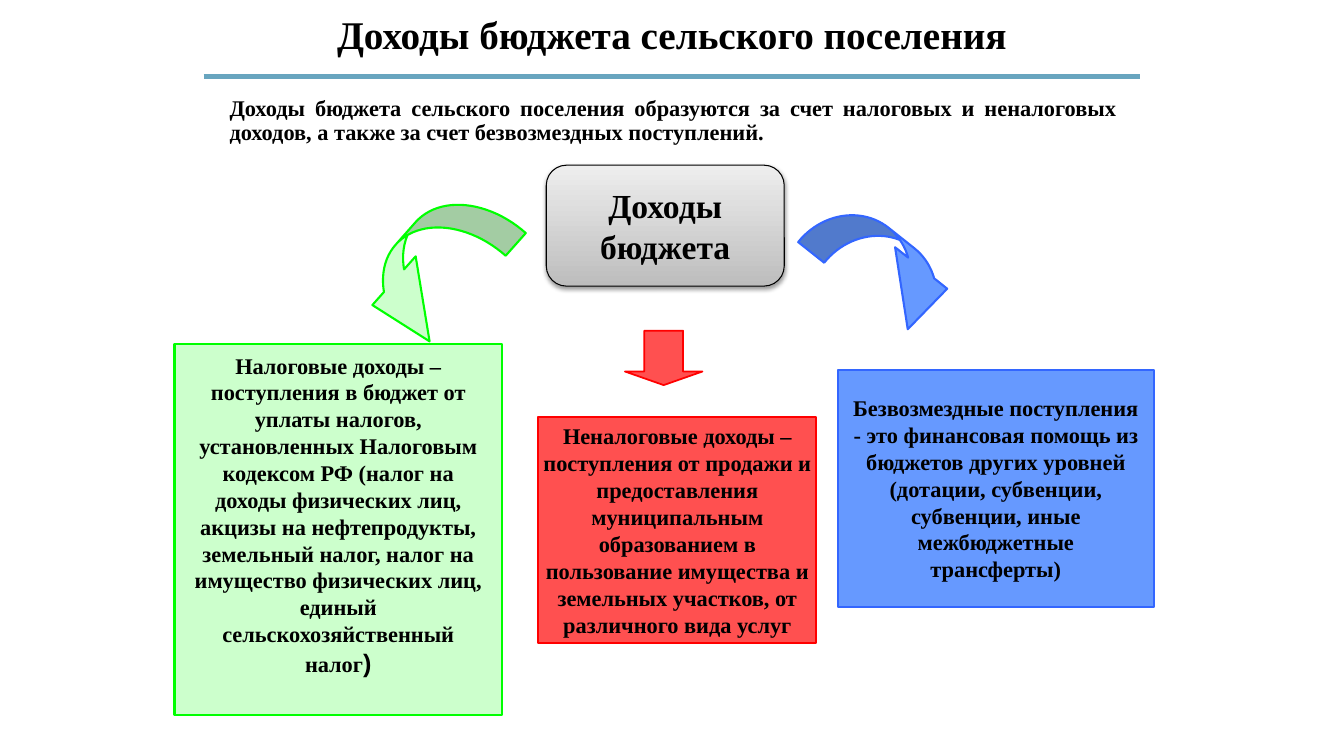
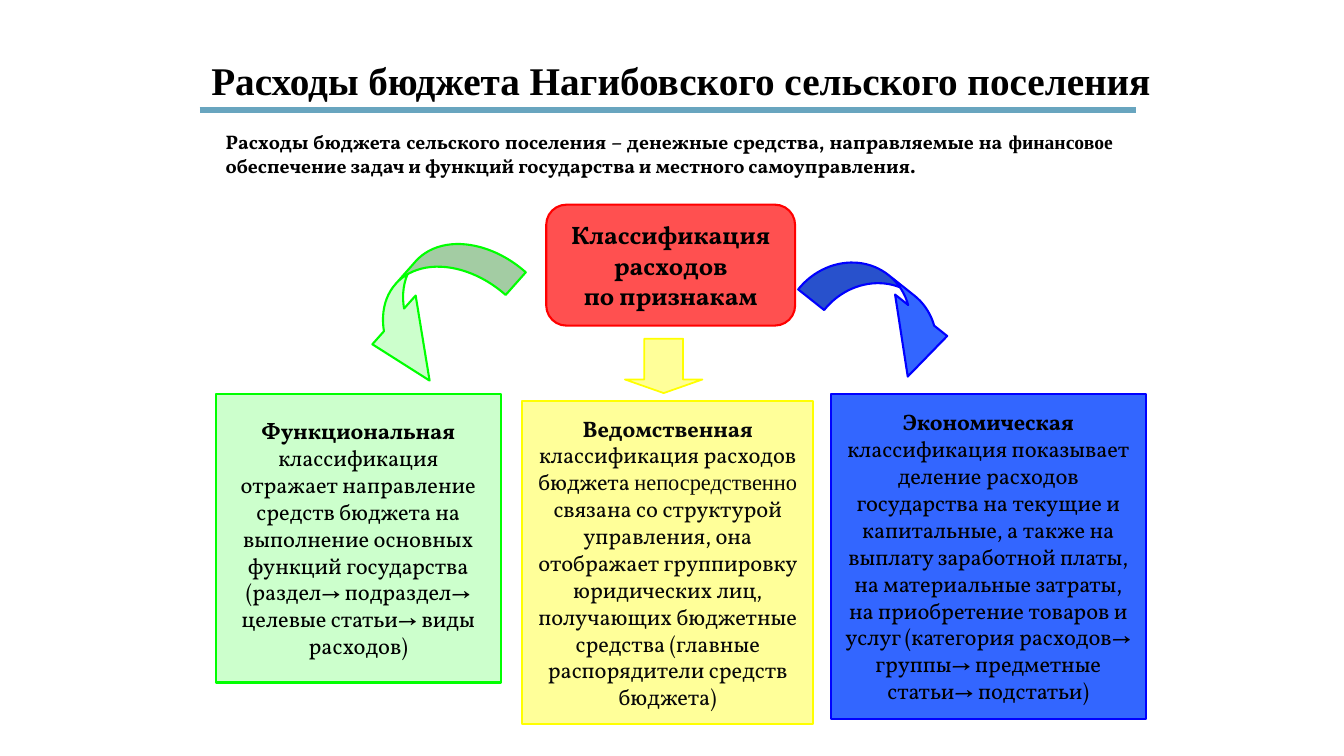
from dataclasses import dataclass
from lxml import etree
from pptx import Presentation
from pptx.dml.color import RGBColor as RGB
from pptx.enum.shapes import MSO_CONNECTOR as Link, MSO_SHAPE as Kind
from pptx.enum.text import MSO_ANCHOR as Anchor, MSO_AUTO_SIZE as Auto, PP_ALIGN as Align
from pptx.oxml import parse_xml
from pptx.oxml.ns import nsdecls, qn
from pptx.util import Pt


@dataclass(frozen=True)
class Theme:
    # Colours: a pair is fill and line
    ink: str = "000000"
    soft: str = "080808"
    rule: str = "68A5BF"
    green: tuple = ("CCFFCC", "00FF00")
    red: tuple = ("FF5050", "FF0000")
    yellow: tuple = ("FFFF99", "FFFF00")
    sky: tuple = ("6699FF", "3366FF")
    blue: tuple = ("3366FF", "0000FF")
    grey: tuple = ("BDBDBD", "EEEEEE")
    # Fonts and sizes
    serif: str = "Times New Roman"
    book: str = "Vollkorn"
    sans: str = "Arial"
    title: int = 28
    hub: int = 24
    mid: int = 18
    body: int = 16
    lead: int = 14


T = Theme()
PLAIN = {"bold": False}
BOLD = {"bold": True}
SERIF = {"name": T.serif}


def pts(*vals):
    return [Pt(v) for v in vals]


def write(shape, paras, font, size, align=Align.CENTER, anchor=Anchor.MIDDLE,
          pad=(7.2, 3.6, 7.2, 3.6), space=1.0, ink=T.ink):
    """Each paragraph is a list of (text, format) runs."""
    frame = shape.text_frame
    left, top, right, low = pts(*pad)
    look = {"word_wrap": True, "auto_size": Auto.NONE, "vertical_anchor": anchor,
            "margin_left": left, "margin_top": top,
            "margin_right": right, "margin_bottom": low}
    for key, val in look.items():
        setattr(frame, key, val)
    for i, runs in enumerate(paras):
        para = frame.paragraphs[0] if i == 0 else frame.add_paragraph()
        para.alignment, para.line_spacing = align, space
        for text, form in runs:
            run = para.add_run()
            run.text = text
            for key, val in {"name": font, "size": Pt(size), **BOLD, **form}.items():
                setattr(run.font, key, val)
            run.font.color.rgb = RGB.from_string(ink)


def draw(slide, kind, box, tone, width=1.5, turn=0, adj=()):
    shape = slide.shapes.add_shape(kind, *pts(*box))
    shape.shadow.inherit = False
    shape.fill.solid()
    shape.fill.fore_color.rgb = RGB.from_string(tone[0])
    shape.line.color.rgb = RGB.from_string(tone[1])
    shape.line.width = Pt(width)
    shape.rotation = turn
    for i, val in enumerate(adj):
        shape.adjustments[i] = val
    return shape


def gloss(shape):
    """Grey gradient, thin dark line and a soft shadow below."""
    shape.fill.gradient()
    shape.fill.gradient_angle = 90
    for stop, tone in zip(shape.fill.gradient_stops, T.grey):
        stop.color.rgb = RGB.from_string(tone)
    shape.line.color.rgb = RGB.from_string(T.ink)
    shape.line.width = Pt(0.75)
    shape.element.spPr.find(qn("a:effectLst")).append(parse_xml(
        f'<a:outerShdw {nsdecls("a")} blurRad="39400" dist="20300" dir="5400000" '
        f'rotWithShape="0"><a:srgbClr val="{T.ink}"><a:alpha val="38000"/>'
        '</a:srgbClr></a:outerShdw>'))


def head(slide, box, title, lead, gap, shift=0, **form):
    """Title above the rule, lead text below; box is the rule's x, y and width."""
    x, y, w = box
    name = slide.shapes.title
    place = pts(x - 52 + shift, y - gap - 40, w + 104, 40)
    for key, val in zip(("left", "top", "width", "height"), place):
        setattr(name, key, val)
    write(name, [[(title, {})]], T.serif, T.title, anchor=Anchor.BOTTOM)
    rule = slide.shapes.add_connector(Link.STRAIGHT, *pts(x, y, x + w, y))
    rule.line.color.rgb = RGB.from_string(T.rule)
    rule.line.width = Pt(3.75)
    etree.SubElement(rule._element.spPr, qn("a:effectLst"))
    text = slide.shapes.add_textbox(*pts(x + 11.5, y + 11, w - 21, 42))
    write(text, [lead], align=Align.JUSTIFY, anchor=Anchor.TOP, **form)


def arrows(slide, x, y, tones, drop, fall):
    """Three arrows: left one at x, y; drop and fall lower the others."""
    left, mid, right = tones
    draw(slide, Kind.CURVED_UP_ARROW, (x, y, 126.7, 64), left,
         turn=131.6, adj=(0.338, 0.727, 0.747))
    draw(slide, Kind.CURVED_DOWN_ARROW, (x + 325.5, y + drop, 123.8, 48.2), right,
         turn=38.5, adj=(0.492, 0.987, 0.834))
    draw(slide, Kind.DOWN_ARROW, (x + 200.2, y + fall, 55.4, 38.9), mid,
         width=1.25, adj=(0.5, 0.25))


def hub(slide, box, tone, paras, **form):
    shape = draw(slide, Kind.ROUNDED_RECTANGLE, box, tone, adj=(0.167,))
    write(shape, paras, pad=(10, 3.6, 10, 3.6), **form)
    return shape


def card(slide, box, tone, runs, font, side=8.6, low=0, ink=T.ink):
    shape = draw(slide, Kind.RECTANGLE, box, tone)
    write(shape, [runs], font, T.body, pad=(side, 0, side, low), ink=ink)


def income(slide):
    head(slide, (145.4, 54.7, 669), "Доходы бюджета сельского поселения",
         [("Доходы бюджета сельского поселения образуются за счет налоговых и "
           "неналоговых доходов, а также за счет безвозмездных поступлений.", {})],
         gap=10, font=T.serif, size=T.body, space=0.9)
    gloss(hub(slide, (390.2, 118, 170, 86.4), T.grey, [[("Доходы бюджета", {})]],
              font=T.serif, size=T.hub))
    # Kinds of income
    card(slide, (124.6, 245.5, 234, 265), T.green, [
        ("Налоговые доходы – поступления в бюджет от уплаты налогов, установленных "
         "Налоговым кодексом РФ (налог на доходы физических лиц, акцизы на "
         "нефтепродукты, земельный налог, налог на имущество физических лиц, единый "
         "сельскохозяйственный налог", {}),
        (")", {"name": T.sans, "size": Pt(T.mid)})], T.serif, low=21)
    card(slide, (384.5, 298, 198.7, 161.3), T.red, [
        ("Неналоговые доходы – поступления от продажи и предоставления муниципальным "
         "образованием в пользование имущества и земельных участков, от различного "
         "вида услуг", {})], T.serif, side=0)
    card(slide, (598.3, 264.2, 226, 169.2), T.sky, [
        ("Безвозмездные поступления - это финансовая помощь из бюджетов других "
         "уровней (дотации, субвенции, субвенции, иные межбюджетные трансферты)",
         {})], T.serif)
    arrows(slide, 246.2, 160.6, (T.green, T.red, T.sky), drop=7.9, fall=75.6)


def spending(slide):
    head(slide, (142.6, 78.5, 669), "Расходы бюджета Нагибовского сельского поселения",
         [("Расходы бюджета сельского поселения – денежные средства, направляемые на ",
           {}), ("финансовое", SERIF),
          (" обеспечение задач и функций государства и местного самоуправления.", {})],
         gap=0.7, shift=9.3, font=T.book, size=T.lead)
    hub(slide, (390.2, 146.2, 177.8, 86.4), T.red,
        [[("Классификация расходов", {})], [("по признакам", {})]],
        font=T.book, size=T.mid)
    # Kinds of classification
    card(slide, (154.1, 281.5, 203.8, 206), T.green, [
        ("Функциональная", BOLD),
        (" классификация отражает направление средств бюджета на выполнение основных "
         "функций государства (раздел→ подраздел→ целевые статьи→ виды расходов)",
         PLAIN)], T.book)
    card(slide, (373, 286.6, 208, 230.4), T.yellow, [
        ("Ведомственная ", BOLD), ("классификация расходов бюджета ", PLAIN),
        ("непосредственно", {**PLAIN, **SERIF}),
        (" связана со структурой управления, она отображает группировку юридических "
         "лиц, получающих бюджетные средства (главные распорядители средств бюджета)",
         PLAIN)], T.book, ink=T.soft)
    card(slide, (593.3, 281.5, 225.4, 231.8), T.blue, [
        ("Экономическая", BOLD),
        (" классификация показывает деление расходов государства на текущие и "
         "капитальные, а также на выплату заработной платы, на материальные затраты, "
         "на приобретение товаров и услуг (категория расходов→ группы→ предметные "
         "статьи→ подстатьи)", PLAIN)], T.book)
    arrows(slide, 246.2, 188.6, (T.green, T.yellow, T.blue), drop=13.7, fall=53.3)


def main():
    deck = Presentation()
    deck.slide_width, deck.slide_height = pts(960, 540)
    for build in (income, spending):
        build(deck.slides.add_slide(deck.slide_layouts[5]))
    deck.save("out.pptx")


if __name__ == "__main__":
    main()
